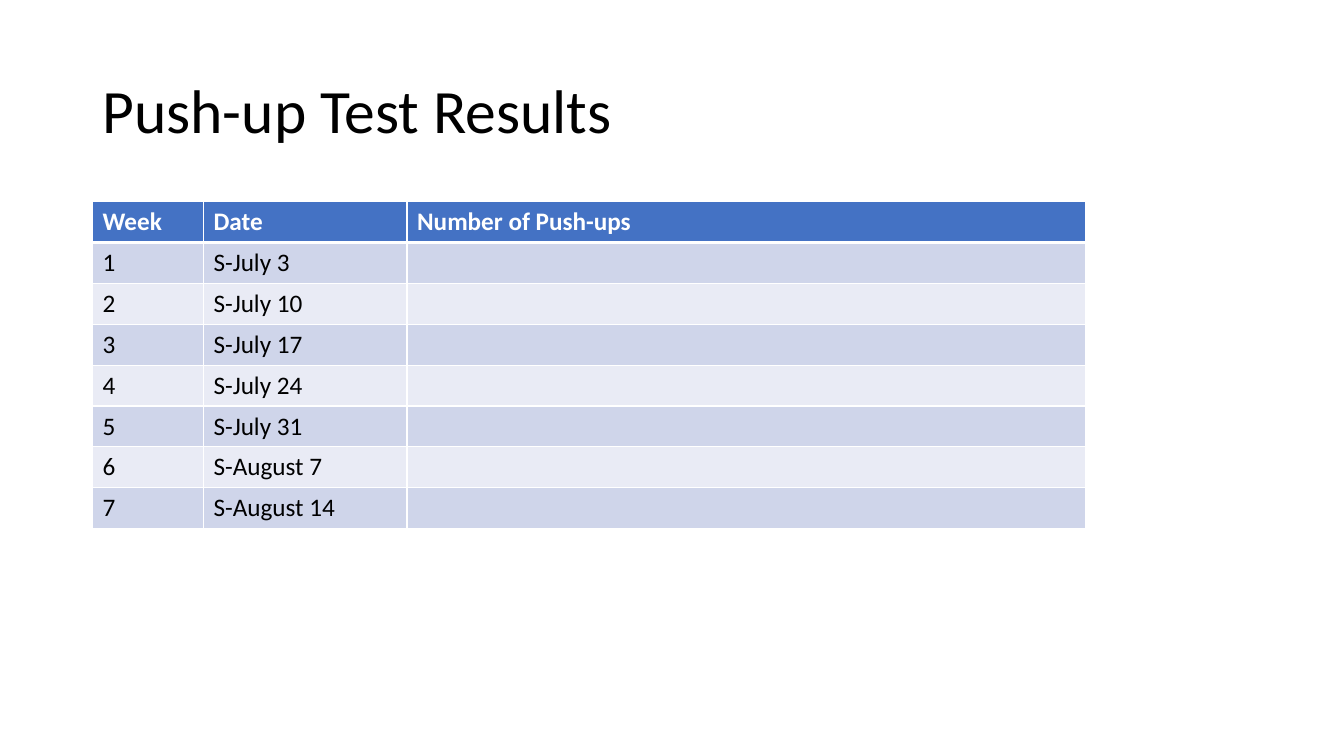
from pptx import Presentation
from pptx.dml.color import RGBColor
from pptx.enum.text import MSO_ANCHOR
from pptx.oxml import parse_xml
from pptx.oxml.ns import nsdecls
from pptx.util import Cm, Pt

BLACK = RGBColor(0x00, 0x00, 0x00)
WHITE = RGBColor(0xFF, 0xFF, 0xFF)
HEADER_BLUE = RGBColor(0x44, 0x72, 0xC4)
BAND_DARK = RGBColor(0xCF, 0xD5, 0xEA)
BAND_LIGHT = RGBColor(0xE9, 0xEB, 0xF5)

DATES = ["S-July 3", "S-July 10", "S-July 17", "S-July 24", "S-July 31",
         "S-August 7", "S-August 14"]


class SlideBuilder:
    font = "Calibri"

    def __init__(self, slide):
        self.slide = slide

    def format_text(self, p, size, color, bold=False):
        for r in p.runs:
            r.font.name = self.font
            r.font.size = Pt(size)
            r.font.bold = bold
            r.font.color.rgb = color

    def title(self, text, left, top, width, height):
        sp = self.slide.shapes.add_textbox(Cm(left), Cm(top), Cm(width), Cm(height))
        tf = sp.text_frame
        tf.word_wrap = True
        tf.vertical_anchor = MSO_ANCHOR.MIDDLE
        tf.text = text
        p = tf.paragraphs[0]
        p.line_spacing = 0.9
        self.format_text(p, 44, BLACK)

    def borders(self, cell, top, bottom):
        tc_pr = cell._tc.get_or_add_tcPr()
        for side, width in (("L", 1), ("R", 1), ("T", top), ("B", bottom)):
            tc_pr.append(parse_xml(
                f'<a:ln{side} {nsdecls("a")} w="{Pt(width)}"><a:solidFill>'
                f'<a:srgbClr val="{WHITE}"/></a:solidFill></a:ln{side}>'))

    def table(self, rows, left, top, col_widths, row_height):
        frame = self.slide.shapes.add_table(
            len(rows), len(col_widths), Cm(left), Cm(top),
            Cm(sum(col_widths)), Cm(row_height * len(rows)))
        table = frame.table
        for column, width in zip(table.columns, col_widths):
            column.width = Cm(width)
        for i, values in enumerate(rows):
            table.rows[i].height = Cm(row_height)
            header = i == 0
            band = BAND_DARK if i % 2 else BAND_LIGHT
            for j, value in enumerate(values):
                cell = table.cell(i, j)
                self.borders(cell, 3 if i == 1 else 1, 3 if header else 1)
                cell.fill.solid()
                cell.fill.fore_color.rgb = HEADER_BLUE if header else band
                if value:
                    cell.text_frame.text = value
                    self.format_text(cell.text_frame.paragraphs[0], 18,
                                     WHITE if header else BLACK, header)


def main():
    prs = Presentation()
    prs.slide_width, prs.slide_height = Cm(33.87), Cm(19.05)
    s = SlideBuilder(prs.slides.add_slide(prs.slide_layouts[6]))

    # Title
    s.title("Push-up Test Results", 2.33, 1.01, 29.21, 3.68)

    # Weekly results, with counts left to fill in
    rows = [("Week", "Date", "Number of Push-ups")]
    rows += [(str(week), date, "") for week, date in enumerate(DATES, 1)]
    s.table(rows, 2.33, 5.08, (2.8, 5.13, 17.09), 1.03)

    prs.save("out.pptx")


if __name__ == "__main__":
    main()
